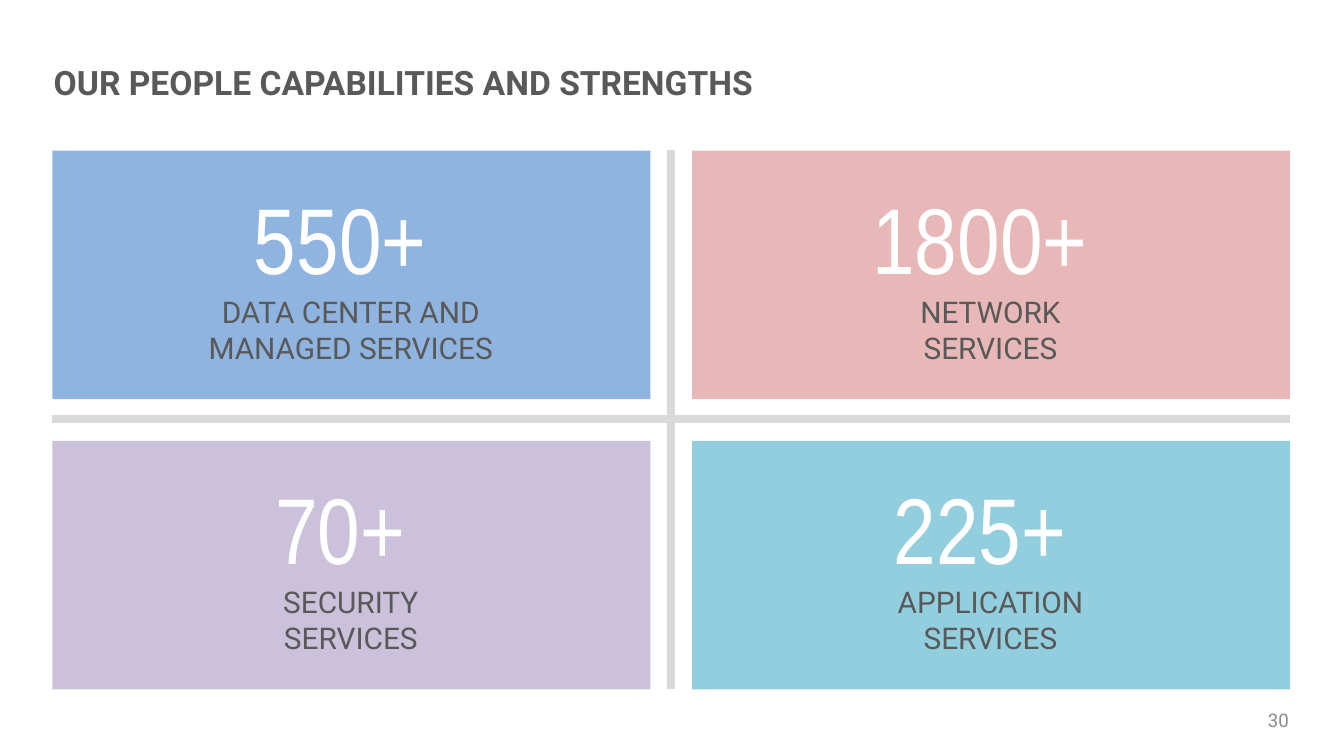
from pptx import Presentation
from pptx.dml.color import RGBColor
from pptx.enum.shapes import MSO_CONNECTOR as Connector, MSO_SHAPE as Shape
from pptx.enum.text import MSO_ANCHOR as Anchor, PP_ALIGN as Align
from pptx.util import Inches, Pt
from lxml import etree

DRAWING = "http://schemas.openxmlformats.org/drawingml/2006/main"


def colour(value):
    return RGBColor.from_string(value)


class SlideBuilder:
    """Holds the style and the current slide."""

    formats = {
        "title": {"name": "Roboto", "size": Pt(18), "bold": True},
        "number": {"name": "Arial Narrow", "size": Pt(50)},
        "label": {"name": "Roboto", "size": Pt(16)},
        "page": {"name": "Roboto", "size": Pt(10)},
    }
    colours = {"title": "595959", "number": "FFFFFF", "label": "595959",
               "page": "8C8C8C", "divider": "D9D9D9"}

    def __init__(self, presentation):
        self.slide = presentation.slides.add_slide(presentation.slide_layouts[6])

    def divider(self, x1, y1, x2, y2):
        line = self.slide.shapes.add_connector(
            Connector.STRAIGHT, Inches(x1), Inches(y1), Inches(x2), Inches(y2))
        line.line.color.rgb = colour(self.colours["divider"])
        line.line.width = Pt(4.25)
        etree.SubElement(line._element.spPr, f"{{{DRAWING}}}effectLst")

    def panel(self, left, top, width, height, fill):
        shape = self.slide.shapes.add_shape(
            Shape.RECTANGLE, Inches(left), Inches(top), Inches(width), Inches(height))
        shape.shadow.inherit = False
        shape.fill.solid()
        shape.fill.fore_color.rgb = colour(fill)
        shape.line.fill.background()

    def text(self, left, top, width, height, parts, align=Align.LEFT,
             anchor=Anchor.TOP, margins=(0.1, 0.1)):
        box = self.slide.shapes.add_textbox(
            Inches(left), Inches(top), Inches(width), Inches(height))
        frame = box.text_frame
        layout = {"word_wrap": True, "vertical_anchor": anchor,
                  "margin_left": Inches(margins[0]), "margin_right": Inches(margins[1]),
                  "margin_top": Inches(0.05), "margin_bottom": Inches(0.05)}
        for name, value in layout.items():
            setattr(frame, name, value)
        for index, (style, words) in enumerate(parts):
            paragraph = frame.add_paragraph() if index else frame.paragraphs[0]
            paragraph.text = words
            paragraph.alignment = align
            for font in [paragraph.font, *(run.font for run in paragraph.runs)]:
                for name, value in self.formats[style].items():
                    setattr(font, name, value)
                font.color.rgb = colour(self.colours[style])


def main():
    presentation = Presentation()
    presentation.slide_width = Inches(10)
    presentation.slide_height = Inches(10 * 9 / 16)
    builder = SlideBuilder(presentation)

    # Grid of two columns and two rows
    columns, rows = (0.39, 5.15), (1.12, 3.28)
    width, height = 4.45, 1.85
    right, bottom = columns[1] + width, rows[1] + height

    # Cross between the panels
    builder.divider(4.99, rows[0], 4.99, bottom)
    builder.divider(columns[0], 3.12, right, 3.12)

    # Title
    builder.text(0.4, 0.41, 8.24, 0.4, [("title", "OUR PEOPLE CAPABILITIES AND STRENGTHS")],
                 anchor=Anchor.MIDDLE, margins=(0, 0.1))

    # Panels with headcounts: column, row, fill, number, label
    panels = [
        (0, 0, "8FB4E0", "550+ ", "DATA CENTER AND MANAGED SERVICES"),
        (1, 0, "E7B8B7", "1800+ ", "NETWORK\nSERVICES"),
        (0, 1, "CBC1DB", "70+ ", "SECURITY\nSERVICES"),
        (1, 1, "92CEDE", "225+ ", "APPLICATION\nSERVICES"),
    ]
    for column, row, fill, number, label in panels:
        left, top = columns[column], rows[row]
        builder.panel(left, top, width, height, fill)
        builder.text(left + 0.91, top + 0.18, 2.62, 1.48,
                     [("number", number), ("label", label)], align=Align.CENTER)

    # Page number
    builder.text(9.06, 5.21, 0.53, 0.3, [("page", "30")], align=Align.RIGHT,
                 anchor=Anchor.MIDDLE, margins=(0.1, 0))

    presentation.save("out.pptx")


if __name__ == "__main__":
    main()
